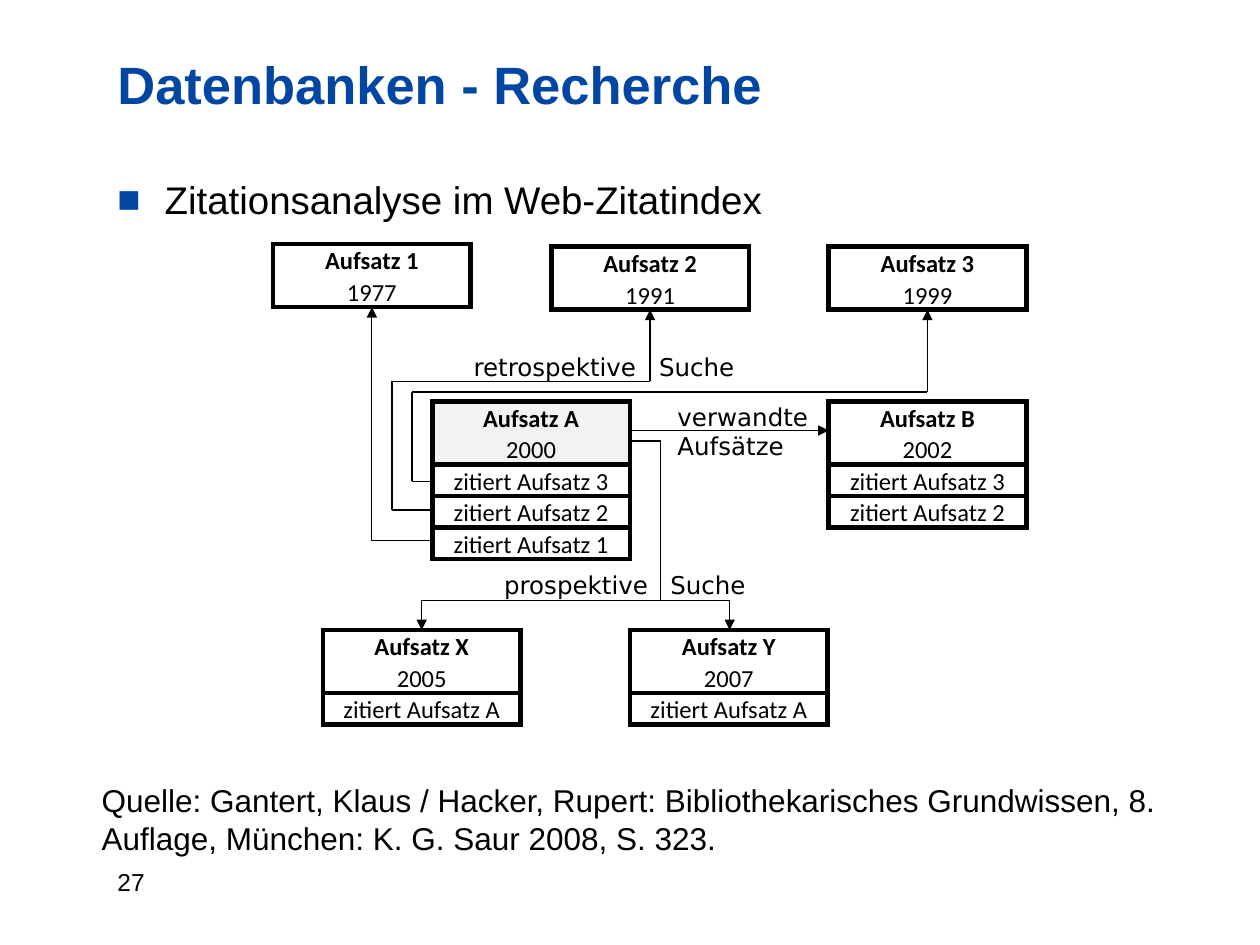
from itertools import pairwise

from lxml.etree import SubElement
from pptx import Presentation
from pptx.dml.color import RGBColor
from pptx.enum.shapes import MSO_CONNECTOR as Connector
from pptx.enum.text import MSO_ANCHOR as Anchor, PP_ALIGN as Align
from pptx.oxml.ns import qn
from pptx.util import Pt

rgb = RGBColor.from_string
BLACK, BLUE, WHITE, GREY = "000000", "0146A3", "FFFFFF", "F2F2F2"


def write(para, text, size, name, color=BLACK, bold=False):
    span = para.add_run()
    span.text = text
    for key, value in {"size": Pt(size), "name": name, "bold": bold}.items():
        setattr(span.font, key, value)
    span.font.color.rgb = rgb(color)


def add_box(left, top, width, height, anchor=Anchor.TOP):
    """Add a wrapping text box and return its text frame."""
    frame = slide.shapes.add_textbox(Pt(left), Pt(top), Pt(width), Pt(height)).text_frame
    frame.word_wrap = True
    frame.vertical_anchor = anchor
    return frame


deck = Presentation()
deck.slide_width, deck.slide_height = Pt(720), Pt(540)
slide = deck.slides.add_slide(deck.slide_layouts[6])

# Title, bullet, source and page number
title = add_box(60, 12, 594, 72, Anchor.MIDDLE)
write(title.paragraphs[0], "Datenbanken - Recherche", 30, "Arial", BLUE, True)

para = add_box(60, 97, 594, 40).paragraphs[0]
properties = para._p.get_or_add_pPr()
properties.set("marL", str(Pt(27)))
properties.set("indent", str(Pt(-27)))
SubElement(SubElement(properties, qn("a:buClr")), qn("a:srgbClr"), val=BLUE)
SubElement(properties, qn("a:buFont"), typeface="Arial")
SubElement(properties, qn("a:buChar"), char="■")
write(para, "Zitationsanalyse im Web-Zitatindex", 22, "Arial")

source = add_box(51, 443, 624, 51)
write(source.paragraphs[0],
      "Quelle: Gantert, Klaus / Hacker, Rupert: Bibliothekarisches Grundwissen, "
      "8. Auflage, München: K. G. Saur 2008, S. 323.", 18, "Arial")
write(add_box(60, 492, 54, 24).paragraphs[0], "27", 14, "Arial")

# Articles: left, top, name, year, cited articles
articles = [
    (156, 139.5, "1", "1977", ""),
    (315, 141, "2", "1991", ""),
    (473.5, 141, "3", "1999", ""),
    (247, 229.5, "A", "2000", "321"),
    (473.5, 229.5, "B", "2002", "32"),
    (184.5, 360, "X", "2005", "A"),
    (360, 360, "Y", "2007", "A"),
]
card_width, head_height, row_height = 113, 36, 18
for left, top, name, year, cited in articles:
    height = head_height + row_height * len(cited)
    table = slide.shapes.add_table(len(cited) + 1, 1, Pt(left), Pt(top),
                                   Pt(card_width), Pt(height)).table
    table.first_row = table.horz_banding = False
    contents = [[(f"Aufsatz {name}", True), (year, False)]]
    contents += [[(f"zitiert Aufsatz {other}", False)] for other in cited]
    for index, lines in enumerate(contents):
        table.rows[index].height = Pt(row_height if index else head_height)
        cell = table.cell(index, 0)
        cell.margin_left = cell.margin_right = Pt(5)
        cell.margin_top = cell.margin_bottom = 0
        for side in ("lnL", "lnR", "lnT", "lnB"):
            border = SubElement(cell._tc.get_or_add_tcPr(), qn(f"a:{side}"), w=str(Pt(3)))
            SubElement(SubElement(border, qn("a:solidFill")), qn("a:srgbClr"), val=BLACK)
        cell.fill.solid()
        cell.fill.fore_color.rgb = rgb(GREY if name == "A" and index == 0 else WHITE)
        for number, (text, bold) in enumerate(lines):
            frame = cell.text_frame
            para = frame.add_paragraph() if number else frame.paragraphs[0]
            para.alignment = Align.CENTER
            para.line_spacing = 1.07
            write(para, text, 14, "Calibri", bold=bold)

# Citation routes, each ending in an arrowhead
routes = [
    [(247, 275), (235.5, 275), (235.5, 224), (530, 224), (530, 177)],
    [(247, 291.5), (224, 291.5), (224, 218), (371.5, 218), (371.5, 177)],
    [(247, 309), (212.5, 309), (212.5, 175.5)],
    [(360, 246), (473.5, 246)],
    [(360, 252), (377.5, 252), (377.5, 343), (417, 343), (417, 360)],
    [(377.5, 343), (241, 343), (241, 360)],
]
for route in routes:
    for start, end in pairwise(route):
        line = slide.shapes.add_connector(Connector.STRAIGHT, *map(Pt, start + end))
        line.line.color.rgb = rgb(BLACK)
        line.line.width = Pt(0.75)
        SubElement(line._element.spPr, qn("a:effectLst"))
        if end == route[-1]:
            SubElement(line.line._get_or_add_ln(), qn("a:tailEnd"), type="triangle")

# Search labels: a tab carries the second word past the vertical line
labels = [
    (263.5, 197.5, 215, "retrospektive\tSuche", 106),
    (281, 322, 199, "prospektive\tSuche", 95),
]
for left, top, width, text, tab in labels:
    para = add_box(left, top, width, 24.5).paragraphs[0]
    tabs = SubElement(para._p.get_or_add_pPr(), qn("a:tabLst"))
    SubElement(tabs, qn("a:tab"), pos=str(Pt(tab)), algn="l")
    write(para, text, 14, "DejaVu Sans")

related = add_box(380, 226, 112, 41)
write(related.paragraphs[0], "verwandte", 14, "DejaVu Sans")
write(related.add_paragraph(), "Aufsätze", 14, "DejaVu Sans")

deck.save("out.pptx")
